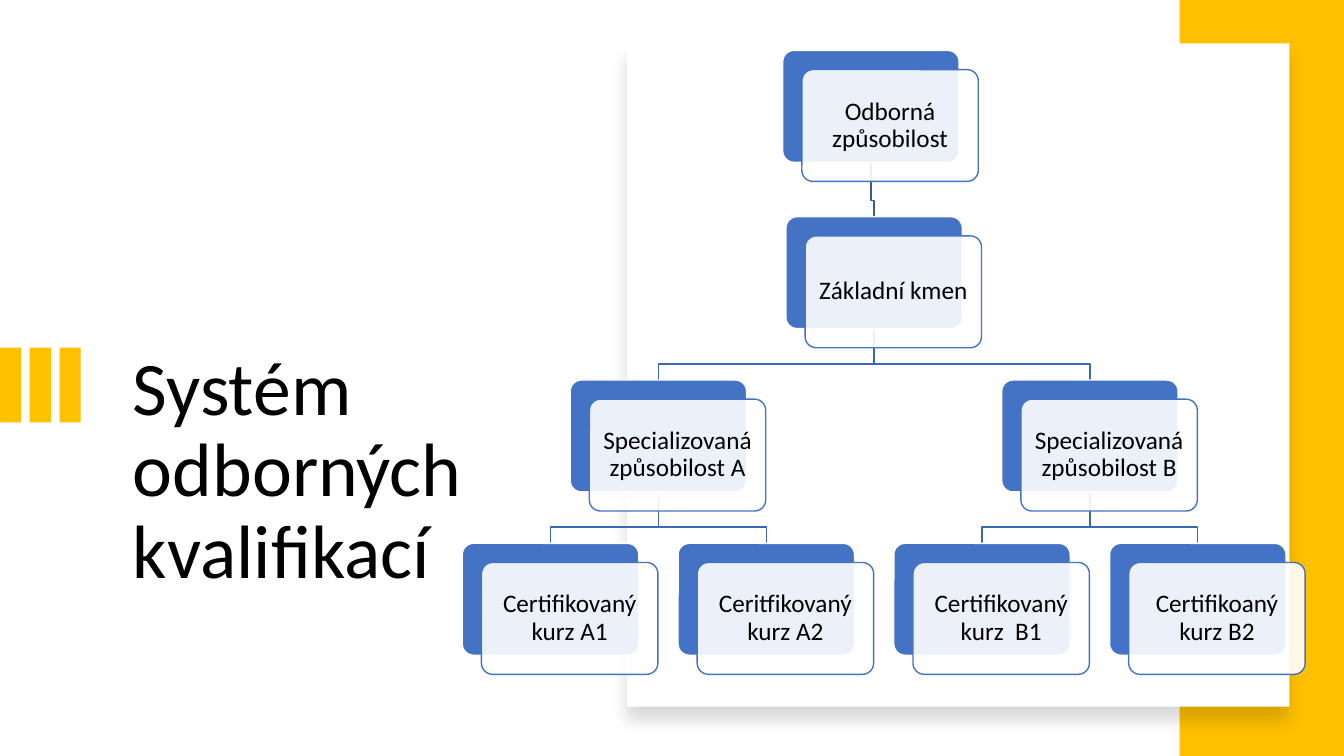
from lxml import etree
from pptx import Presentation
from pptx.dml.color import RGBColor
from pptx.enum.shapes import MSO_SHAPE as SHAPE
from pptx.enum.text import MSO_ANCHOR as ANCHOR, PP_ALIGN as ALIGN
from pptx.oxml.ns import qn
from pptx.util import Inches, Pt

TITLE = "Systém odborných kvalifikací"
YELLOW, BLUE, WHITE, BLACK = "FFC000", "4472C4", "FFFFFF", "000000"
ROOT_LINE, BRANCH_LINE = "365B9D", "3E67B2"

# key: (text, column, level, parent)
NODES = {
    "root": ("Odborná způsobilost", 2.97, 0, None),
    "core": ("Základní kmen", 3, 1, "root"),
    "A": ("Specializovaná způsobilost A", 1, 2, "core"),
    "A1": ("Certifikovaný kurz A1", 0, 3, "A"),
    "A2": ("Ceritfikovaný kurz A2", 2, 3, "A"),
    "B": ("Specializovaná způsobilost B", 5, 2, "core"),
    "B1": ("Certifikovaný kurz  B1", 4, 3, "B"),
    "B2": ("Certifikoaný kurz B2", 6, 3, "B"),
}
LEVEL_TOPS = [0.5, 2.15, 3.77, 5.39]
FIRST_CENTER, COLUMN_STEP = 5.46, 1.07
CARD_W, CARD_H, CARD_OFFSET = 1.75, 1.11, 0.19
BEND = 0.16  # height of the bend above the child card

prs = Presentation()
prs.slide_width, prs.slide_height = Inches(13.33), Inches(7.5)
s = prs.slides.add_slide(prs.slide_layouts[6])


def rgb(value):
    return RGBColor.from_string(value)


def add_box(kind, x, y, w, h, fill, line=None):
    sp = s.shapes.add_shape(kind, Inches(x), Inches(y), Inches(w), Inches(h))
    sp.shadow.inherit = False
    sp.fill.solid()
    sp.fill.fore_color.rgb = rgb(fill)
    if line:
        sp.line.color.rgb = rgb(line)
        sp.line.width = Pt(1)
    else:
        sp.line.fill.background()
    return sp


def set_alpha(color, percent):
    etree.SubElement(color, qn("a:alpha"), val=str(percent * 1000))


def add_panel_shadow(sp):
    effects = sp._element.spPr.find(qn("a:effectLst"))
    shadow = etree.SubElement(
        effects, qn("a:outerShdw"), blurRad=str(Pt(11)), dist=str(Pt(10)),
        dir=str(90 * 60000), algn="t", rotWithShape="0")
    set_alpha(etree.SubElement(shadow, qn("a:srgbClr"), val=BLACK), 15)


def write(sp, text, size, align, anchor):
    tf = sp.text_frame
    tf.word_wrap = True
    tf.vertical_anchor = anchor
    p = tf.paragraphs[0]
    p.text = text
    p.alignment = align
    p.line_spacing = 0.9
    p.font.name, p.font.size = "Calibri", Pt(size)
    p.font.color.rgb = rgb(BLACK)
    return tf


def card_position(key):
    """Return the horizontal centre and the top of the card's back plate."""
    _, column, level, _ = NODES[key]
    return FIRST_CENTER + column * COLUMN_STEP, LEVEL_TOPS[level]


def add_branch(parent, child):
    (x1, top), (x2, y2) = card_position(parent), card_position(child)
    y1, bend = top + CARD_H, y2 - BEND
    points = [(Inches(x), Inches(y))
              for x, y in [(x1, y1), (x1, bend), (x2, bend), (x2, y2)]]
    builder = s.shapes.build_freeform(*points[0])
    builder.add_line_segments(points[1:], close=False)
    sp = builder.convert_to_shape()
    sp.shadow.inherit = False
    sp.fill.background()
    sp.line.color.rgb = rgb(ROOT_LINE if parent == "root" else BRANCH_LINE)
    sp.line.width = Pt(1)


def add_card(key):
    center, top = card_position(key)
    left = center - CARD_W / 2
    back = add_box(SHAPE.ROUNDED_RECTANGLE, left, top, CARD_W, CARD_H, BLUE, WHITE)
    front = add_box(SHAPE.ROUNDED_RECTANGLE, left + CARD_OFFSET, top + CARD_OFFSET,
                    CARD_W, CARD_H, WHITE, BLUE)
    back.adjustments[0] = front.adjustments[0] = 0.1
    set_alpha(front._element.spPr.find(qn("a:solidFill"))[0], 90)
    tf = write(front, NODES[key][0], 18, ALIGN.CENTER, ANCHOR.MIDDLE)
    tf.margin_left = tf.margin_right = Inches(0.07)
    tf.margin_top = tf.margin_bottom = Inches(0.07)


title = s.shapes.add_textbox(Inches(1.22), Inches(3.42), Inches(4.41), Inches(2.61))
write(title, TITLE, 54, ALIGN.LEFT, ANCHOR.TOP)

for i in range(3):
    add_box(SHAPE.RECTANGLE, i * 0.295, 3.45, 0.21, 0.74, YELLOW)
add_box(SHAPE.RECTANGLE, 11.7, 0, 1.63, 7.5, YELLOW)
add_panel_shadow(add_box(SHAPE.RECTANGLE, 6.22, 0.43, 6.57, 6.58, WHITE))

for key, (_, _, _, parent) in NODES.items():
    if parent:
        add_branch(parent, key)
for key in NODES:
    add_card(key)

prs.save("out.pptx")
